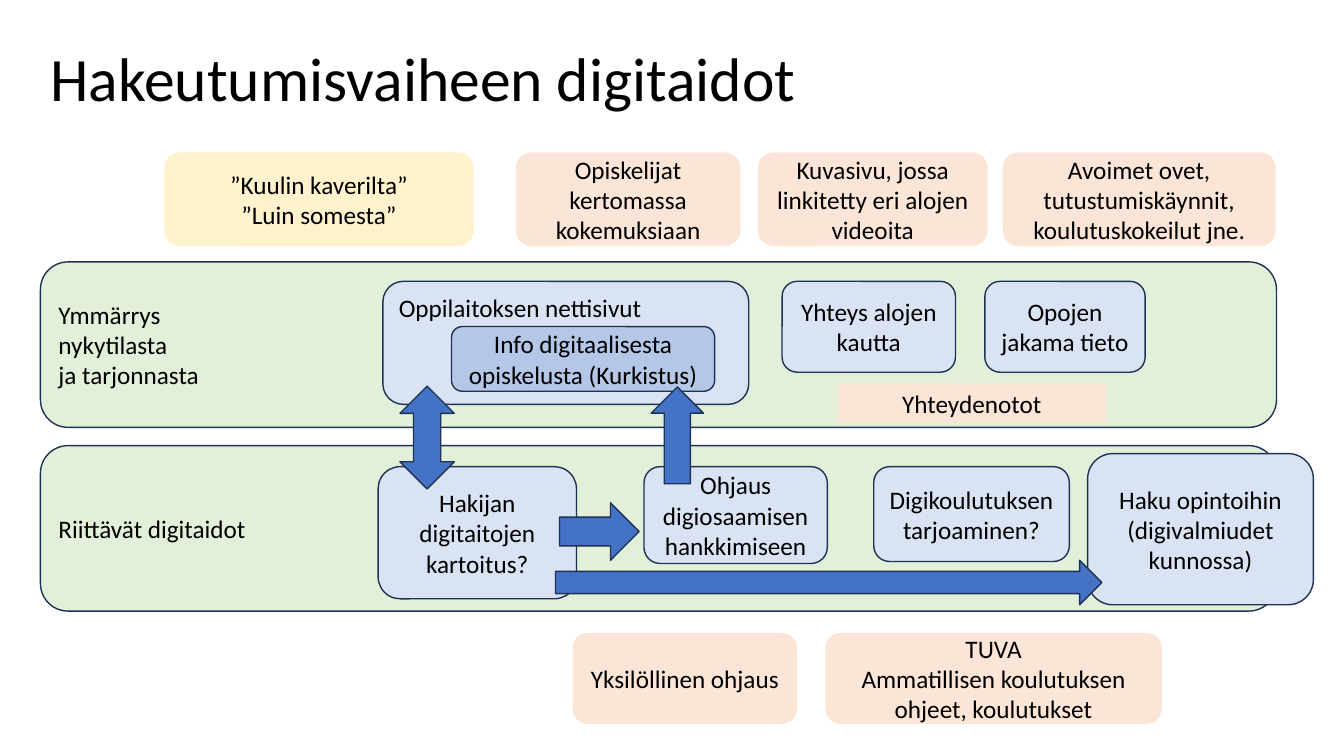
import pptx
import pptx.util
import pptx.dml.color
import pptx.enum.shapes
import pptx.enum.text

Cm, Pt = pptx.util.Cm, pptx.util.Pt
RGB = pptx.dml.color.RGBColor
SHAPE = pptx.enum.shapes.MSO_SHAPE
ALIGN = pptx.enum.text.PP_ALIGN
ANCHOR = pptx.enum.text.MSO_ANCHOR

HUES = {
    "text": "000000",
    "edge": "1E3256",
    "cream": "FFF2CC",
    "peach": "FBE5D6",
    "green": "E2F0D9",
    "pale": "DAE3F3",
    "blue": "B4C7E7",
    "arrow": "4472C4",
}


def hue(name):
    return RGB.from_string(HUES[name])


def write(frame, text, size=18, align=ALIGN.CENTER, anchor=ANCHOR.MIDDLE, space=1.0):
    """Fill a text frame, one paragraph for each line of text."""
    frame.word_wrap = True
    frame.vertical_anchor = anchor
    for i, line in enumerate(text.split("\n")):
        para = frame.add_paragraph() if i else frame.paragraphs[0]
        para.alignment = align
        para.line_spacing = space
        run = para.add_run()
        run.text = line
        run.font.name = "Calibri"
        run.font.size = Pt(size)
        run.font.color.rgb = hue("text")


def draw(slide, kind, area, fill, edge):
    shape = slide.shapes.add_shape(kind, *map(Cm, area))
    shape.shadow.inherit = False
    shape.fill.solid()
    shape.fill.fore_color.rgb = hue(fill)
    if edge:
        shape.line.color.rgb = hue("edge")
        shape.line.width = Pt(1)
    else:
        shape.line.fill.background()
    return shape


def box(slide, text, area, fill="pale", edge=True, kind=SHAPE.ROUNDED_RECTANGLE, **style):
    shape = draw(slide, kind, area, fill, edge)
    write(shape.text_frame, text, **style)


def note(slide, text, area, fill="peach", **style):
    """Add a box without an outline."""
    box(slide, text, area, fill, edge=False, **style)


def arrow(slide, area, kind=SHAPE.RIGHT_ARROW, turn=0):
    draw(slide, kind, area, "arrow", True).rotation = turn


def title(slide, text):
    frame = slide.shapes.add_textbox(Cm(1.02), Cm(0.71), Cm(30.58), Cm(2.69)).text_frame
    write(frame, text, size=44, align=ALIGN.LEFT, space=0.9)


def sources(slide):
    """Add the row of notes above the bands."""
    top, high = 3.84, 2.36
    note(slide, "”Kuulin kaverilta”\n”Luin somesta”", (4.14, top, 7.8, high), "cream")
    for text, left, wide in (
        ("Opiskelijat kertomassa kokemuksiaan", 13, 5.66),
        ("Kuvasivu, jossa linkitetty eri alojen videoita", 19.1, 5.79),
        ("Avoimet ovet, tutustumiskäynnit, koulutuskokeilut jne.", 25.27, 6.88),
    ):
        note(slide, text, (left, top, wide, high))


def band(slide, text, top):
    box(slide, text, (1.02, top, 31.15, 4.17), "green", align=ALIGN.LEFT)


def offer(slide):
    """Add the upper band and its boxes."""
    band(slide, "Ymmärrys\nnykytilasta\nja tarjonnasta", 6.6)
    top = 7.09
    box(slide, "Oppilaitoksen nettisivut", (9.65, top, 9.22, 3.1),
        align=ALIGN.LEFT, anchor=ANCHOR.TOP)
    box(slide, "Info digitaalisesta opiskelusta (Kurkistus)",
        (11.38, 8.23, 6.63, 1.63), "blue")
    box(slide, "Yhteys alojen kautta", (19.71, top, 4.37, 2.29))
    box(slide, "Opojen jakama tieto", (24.82, top, 4.04, 2.29))
    note(slide, "Yhteydenotot", (21.11, 9.65, 6.76, 1.02), kind=SHAPE.RECTANGLE)


def skills(slide):
    """Add the lower band and its boxes."""
    band(slide, "Riittävät digitaidot", 11.23)
    top = 11.76
    box(slide, "Hakijan digitaitojen kartoitus?", (9.53, top, 5, 3.33))
    box(slide, "Ohjaus digiosaamisen hankkimiseen", (16.23, top, 4.62, 2.44))
    box(slide, "Digikoulutuksen tarjoaminen?", (22.02, top, 4.93, 2.39))
    box(slide, "Haku opintoihin (digivalmiudet kunnossa)", (27.41, 11.43, 5.69, 3.81))


def support(slide):
    """Add the notes below the bands."""
    top, high = 15.95, 2.29
    note(slide, "Yksilöllinen ohjaus", (14.43, top, 5.66, high))
    note(slide, "TUVA\nAmmatillisen koulutuksen ohjeet, koulutukset",
         (20.8, top, 8.48, high))


def flow(slide):
    """Add the arrows between the boxes."""
    arrow(slide, (14.1, 12.67, 2.01, 1.45))
    arrow(slide, (15.85, 10.31, 2.44, 1.32), turn=270)
    arrow(slide, (14, 14.12, 13.77, 1.12))
    arrow(slide, (9.47, 10.34, 2.59, 1.37), SHAPE.LEFT_RIGHT_ARROW, turn=270)


def main():
    deck = pptx.Presentation()
    deck.slide_width, deck.slide_height = Cm(33.87), Cm(19.05)
    slide = deck.slides.add_slide(deck.slide_layouts[6])
    title(slide, "Hakeutumisvaiheen digitaidot")
    sources(slide)
    offer(slide)
    skills(slide)
    support(slide)
    flow(slide)
    deck.save("out.pptx")


if __name__ == "__main__":
    main()
